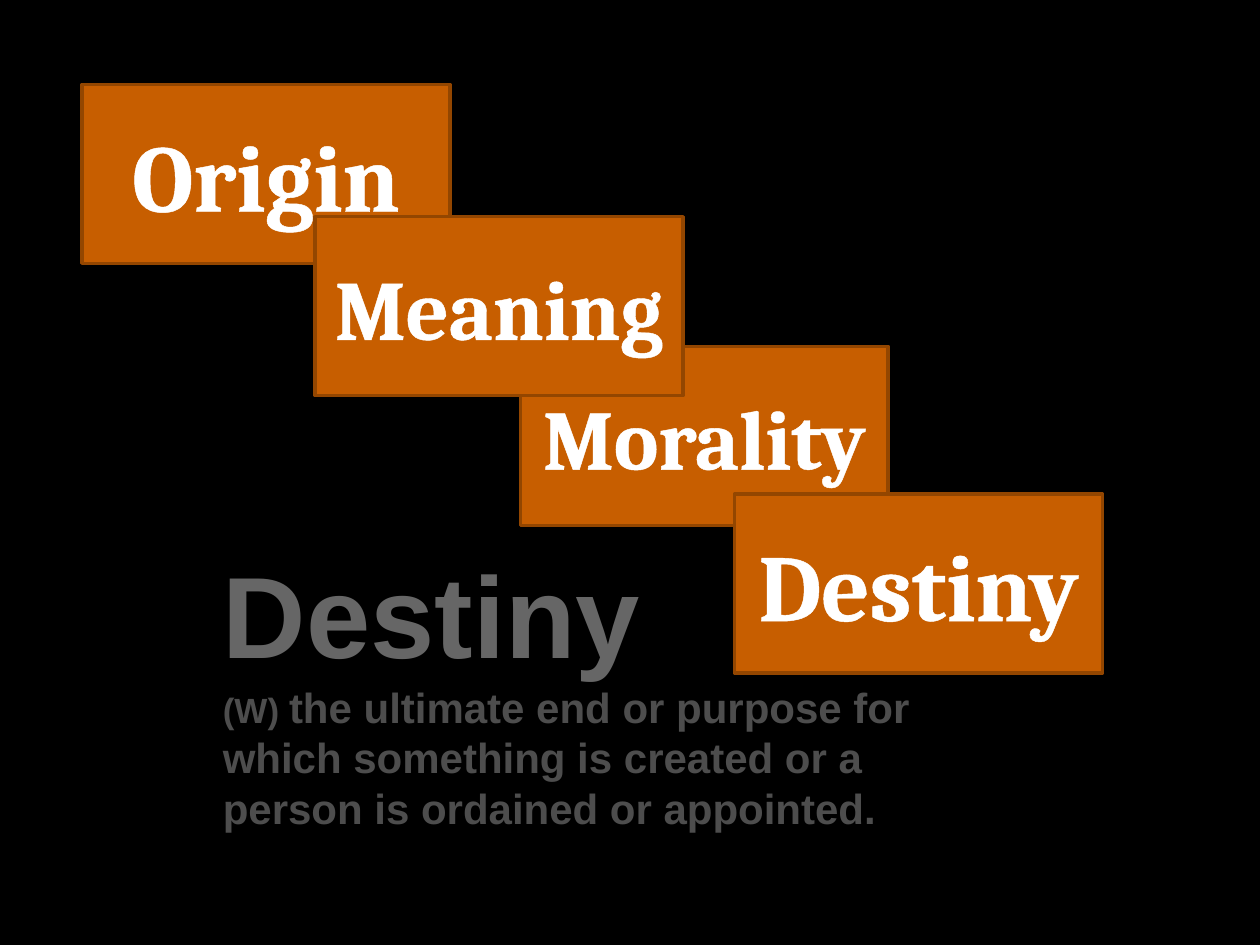
"""Build a slide of four stepped cards with a definition of destiny."""
from typing import NamedTuple

from lxml.etree import SubElement
from pptx import Presentation
from pptx.dml.color import RGBColor
from pptx.enum.shapes import MSO_SHAPE
from pptx.enum.text import MSO_ANCHOR, MSO_AUTO_SIZE, PP_ALIGN
from pptx.oxml.ns import qn
from pptx.slide import Slide
from pptx.text.text import _Run as Run
from pptx.util import Inches, Pt

BLACK = RGBColor(0x00, 0x00, 0x00)
WHITE = RGBColor(0xFF, 0xFF, 0xFF)
ORANGE = RGBColor(0xC7, 0x5E, 0x00)
BROWN = RGBColor(0x93, 0x46, 0x00)
GRAY = RGBColor(0x66, 0x66, 0x66)
DARK_GRAY = RGBColor(0x4D, 0x4D, 0x4D)
CARD_WIDTH, CARD_HEIGHT = 2.92, 1.42


class Card(NamedTuple):
    label: str
    left: float
    top: float
    size: int


class Passage(NamedTuple):
    text: str
    size: int
    color: RGBColor


CARDS = [
    Card("Morality", 4.13, 2.75, 48),
    Card("Origin", 0.65, 0.67, 54),
    Card("Meaning", 2.5, 1.72, 48),
    Card("Destiny", 5.83, 3.92, 54),
]
TERM = Passage("Destiny", 66, GRAY)
MEANING = [
    Passage("(W) ", 20, DARK_GRAY),
    Passage(
        "the ultimate end or purpose for which something is created "
        "or a person is ordained or appointed.",
        24,
        DARK_GRAY,
    ),
]


def format_run(run: Run, font_name: str, size: int, color: RGBColor) -> None:
    run.font.name = font_name
    run.font.size = Pt(size)
    run.font.bold = True
    run.font.color.rgb = color


def outline_run(run: Run, color: RGBColor, width: float) -> None:
    properties = run.font._element
    line = SubElement(properties, qn("a:ln"), w=str(Pt(width)))
    fill = SubElement(line, qn("a:solidFill"))
    SubElement(fill, qn("a:srgbClr"), val=str(color))
    properties.insert(0, line)


def draw_card(slide: Slide, card: Card) -> None:
    shape = slide.shapes.add_shape(
        MSO_SHAPE.RECTANGLE,
        Inches(card.left),
        Inches(card.top),
        Inches(CARD_WIDTH),
        Inches(CARD_HEIGHT),
    )
    shape.shadow.inherit = False
    shape.fill.solid()
    shape.fill.fore_color.rgb = ORANGE
    shape.line.color.rgb = BROWN
    shape.line.width = Pt(2)
    text_frame = shape.text_frame
    text_frame.text = card.label
    text_frame.vertical_anchor = MSO_ANCHOR.MIDDLE
    paragraph = text_frame.paragraphs[0]
    paragraph.alignment = PP_ALIGN.CENTER
    run = paragraph.runs[0]
    format_run(run, "Cambria", card.size, WHITE)
    outline_run(run, WHITE, 1.45)


def draw_definition(slide: Slide, term: Passage, meaning: list[Passage]) -> None:
    text_box = slide.shapes.add_textbox(
        Inches(1.67), Inches(4.26), Inches(6.33), Inches(2.42)
    )
    text_frame = text_box.text_frame
    text_frame.word_wrap = True
    text_frame.auto_size = MSO_AUTO_SIZE.SHAPE_TO_FIT_TEXT
    paragraph = text_frame.paragraphs[0]
    for passage in [term, *meaning]:
        run = paragraph.add_run()
        run.text = passage.text
        format_run(run, "Arial", passage.size, passage.color)
        if passage is term:
            paragraph.add_line_break()


def main() -> None:
    presentation = Presentation()
    presentation.slide_width = Inches(10)
    presentation.slide_height = Inches(7.5)
    slide = presentation.slides.add_slide(
        presentation.slide_layouts.get_by_name("Blank")
    )
    slide.background.fill.solid()
    slide.background.fill.fore_color.rgb = BLACK
    for card in CARDS:
        draw_card(slide, card)
    draw_definition(slide, TERM, MEANING)
    presentation.save("out.pptx")


if __name__ == "__main__":
    main()
